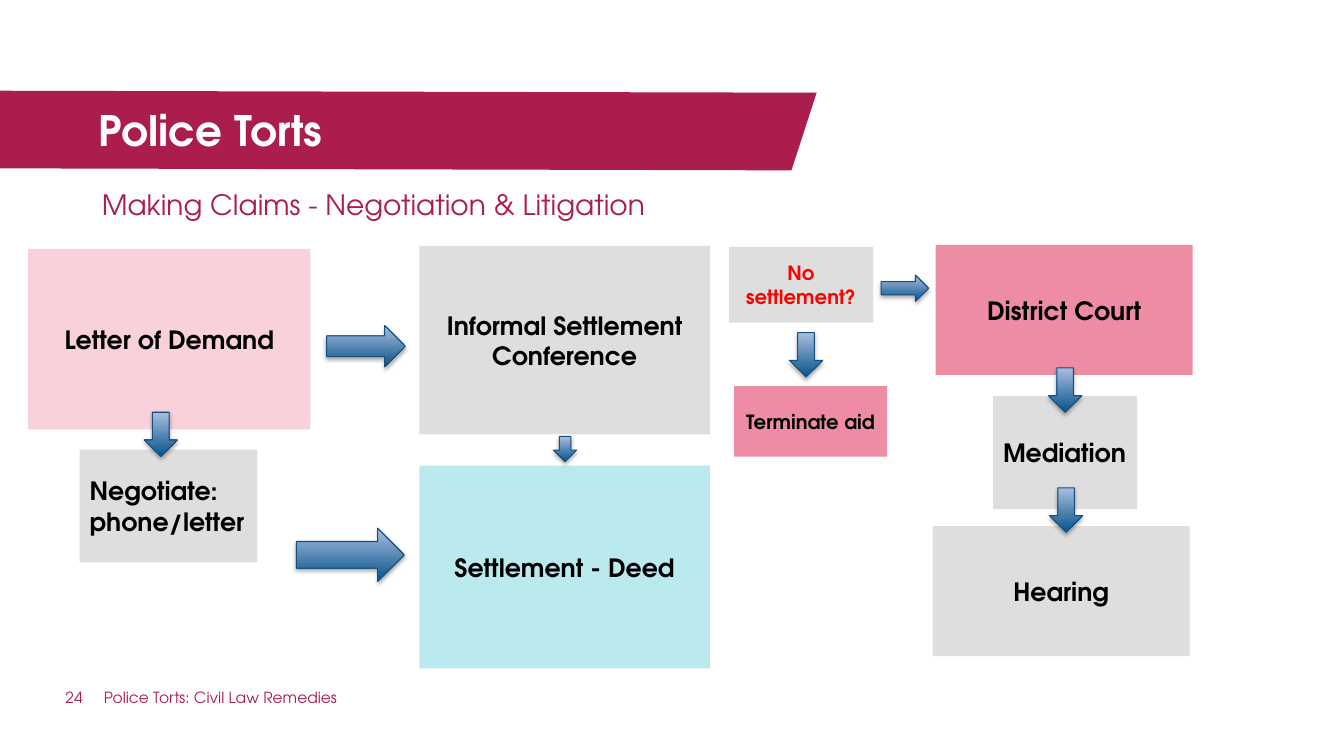
import lxml.etree
import pptx
import pptx.dml.color
import pptx.enum.dml
import pptx.enum.shapes
import pptx.enum.text
import pptx.oxml.ns
import pptx.util

COLORS = {
    "wine": "AB1E4B", "white": "FFFFFF", "black": "000000", "red": "FF0000",
    "blush": "F8D1DA", "pink": "ED8CA3", "gray": "DEDEDE", "aqua": "BAEAEE",
    "deep": "07538C", "sky": "AABEDE", "edge": "13507D",
}
FONT = "TeX Gyre Adventor"
COLS, ROWS = 133.3, 75  # grid of tenth-inch cells
SHAPE = pptx.enum.shapes.MSO_SHAPE
ALIGN = pptx.enum.text.PP_ALIGN
ANCHOR = pptx.enum.text.MSO_ANCHOR
qn = pptx.oxml.ns.qn


def tint(name):
    return pptx.dml.color.RGBColor.from_string(COLORS[name])


def write(frame, text, size=18, color="black", bold=False, align=ALIGN.LEFT,
          anchor=ANCHOR.TOP, inset=None, line=None, after=None):
    frame.word_wrap = True
    frame.auto_size = pptx.enum.text.MSO_AUTO_SIZE.NONE
    frame.vertical_anchor = anchor
    if inset is not None:
        frame.margin_left = frame.margin_right = inset
        frame.margin_top = frame.margin_bottom = inset
    para = frame.paragraphs[0]
    para.alignment = align
    para.space_before = pptx.util.Pt(0)
    if line:
        para.line_spacing = line
    if after:
        para.space_after = pptx.util.Pt(after)
    run = para.add_run()
    run.text = text
    run.font.name, run.font.bold = FONT, bold
    run.font.size = pptx.util.Pt(size)
    run.font.color.rgb = tint(color)


class Board:
    def __init__(self):
        self.deck = pptx.Presentation()
        self.deck.slide_width = pptx.util.Inches(13.33)
        self.deck.slide_height = pptx.util.Inches(7.5)
        self.slide = self.deck.slides.add_slide(self.deck.slide_layouts[0])
        self.shapes = self.slide.shapes

    def place(self, *cells):
        """Turn columns and rows, in turn, into slide lengths."""
        units = (self.deck.slide_width / COLS, self.deck.slide_height / ROWS)
        return [round(cell * units[i % 2]) for i, cell in enumerate(cells)]

    def banner(self, points, color):
        start, *rest = [self.place(*point) for point in points]
        draft = self.shapes.build_freeform(*start)
        draft.add_line_segments(rest)
        shape = draft.convert_to_shape()
        shape.shadow.inherit = False
        shape.fill.solid()
        shape.fill.fore_color.rgb = tint(color)
        shape.line.fill.background()
        self.shapes.title.element.addprevious(shape.element)

    def holder(self, index, cells, text, **style):
        shape = self.slide.placeholders[index]
        shape.left, shape.top, shape.width, shape.height = self.place(*cells)
        write(shape.text_frame, text, inset=0, **style)

    def label(self, cells, text, **style):
        shape = self.shapes.add_textbox(*self.place(*cells))
        write(shape.text_frame, text, inset=0, **style)

    def box(self, cells, text, fill, **style):
        shape = self.shapes.add_shape(SHAPE.RECTANGLE, *self.place(*cells))
        shape.shadow.inherit = False
        shape.fill.solid()
        shape.fill.fore_color.rgb = tint(fill)
        shape.line.fill.background()
        style = {"align": ALIGN.CENTER, **style}
        write(shape.text_frame, text, bold=True, anchor=ANCHOR.MIDDLE, **style)

    def arrow(self, kind, cells):
        shape = self.shapes.add_shape(kind, *self.place(*cells))
        shape.fill.gradient()
        shape.fill.gradient_angle = 90
        for stop, color in zip(shape.fill.gradient_stops, ("deep", "sky")):
            stop.color.rgb = tint(color)
        shape.line.color.rgb = tint("edge")
        shape.line.width = pptx.util.Pt(0.75)
        self.shade(shape)

    def shade(self, shape):
        """Give the shape a soft shadow straight below it."""
        shape.shadow.inherit = False
        effect = shape.element.spPr.find(qn("a:effectLst"))
        outer = lxml.etree.SubElement(
            effect, qn("a:outerShdw"), blurRad=str(pptx.util.Pt(3.1)),
            dist=str(pptx.util.Pt(1.8)), dir="5400000", rotWithShape="0")
        color = lxml.etree.SubElement(outer, qn("a:srgbClr"), val=COLORS["black"])
        lxml.etree.SubElement(color, qn("a:alpha"), val="35000")


def main():
    board = Board()
    board.banner([(0, 9), (81, 9.2), (78.5, 16.9), (0, 16.7)], "wine")
    board.holder(0, (9.8, 10.4, 68.2, 4.9), "Police Torts",
                 size=30, color="white", bold=True)
    board.holder(1, (10.1, 17.9, 108.7, 4.7),
                 "Making Claims - Negotiation & Litigation",
                 size=20, color="wine", line=1.2, after=2)
    board.label((6.5, 68.3, 3.7, 3.5), "24", size=11, color="wine")
    board.label((10.3, 68.3, 61.4, 3.5), "Police Torts: Civil Law Remedies",
                size=11, color="wine")

    for cells, text, fill, style in (
        ((2.8, 24.7, 28, 17.9), "Letter of Demand", "blush", {}),
        ((41.6, 46.2, 28.8, 20.1), "Settlement - Deed", "aqua", {}),
        ((41.6, 24.4, 28.8, 18.7), "Informal Settlement Conference", "gray", {}),
        ((92.5, 52.2, 25.5, 12.9), "Hearing", "gray", {}),
        ((92.8, 24.3, 25.5, 12.9), "District Court", "pink", {}),
        ((98.5, 39.3, 14.3, 11.2), "Mediation", "gray", {"align": ALIGN.JUSTIFY}),
        ((7.9, 44.6, 17.6, 11.2), "Negotiate: phone/letter", "gray",
         {"align": ALIGN.JUSTIFY}),
        ((72.3, 24.5, 14.3, 7.5), "No settlement?", "gray",
         {"size": 14, "color": "red"}),
        ((72.8, 38.3, 15.2, 7), "Terminate aid", "pink", {"size": 14}),
    ):
        board.box(cells, text, fill, **style)

    for spot in ((14.3, 40.9), (104, 36.5), (104.1, 48.4), (78.3, 33)):
        board.arrow(SHAPE.DOWN_ARROW, (*spot, 3.3, 4.4))
    board.arrow(SHAPE.DOWN_ARROW, (54.9, 43.3, 2.3, 2.5))
    for cells in ((29.4, 52.4, 10.7, 5.3), (32.4, 32.3, 7.8, 4.1),
                  (87.4, 27.3, 4.7, 2.6)):
        board.arrow(SHAPE.RIGHT_ARROW, cells)
    board.deck.save("out.pptx")


if __name__ == "__main__":
    main()
